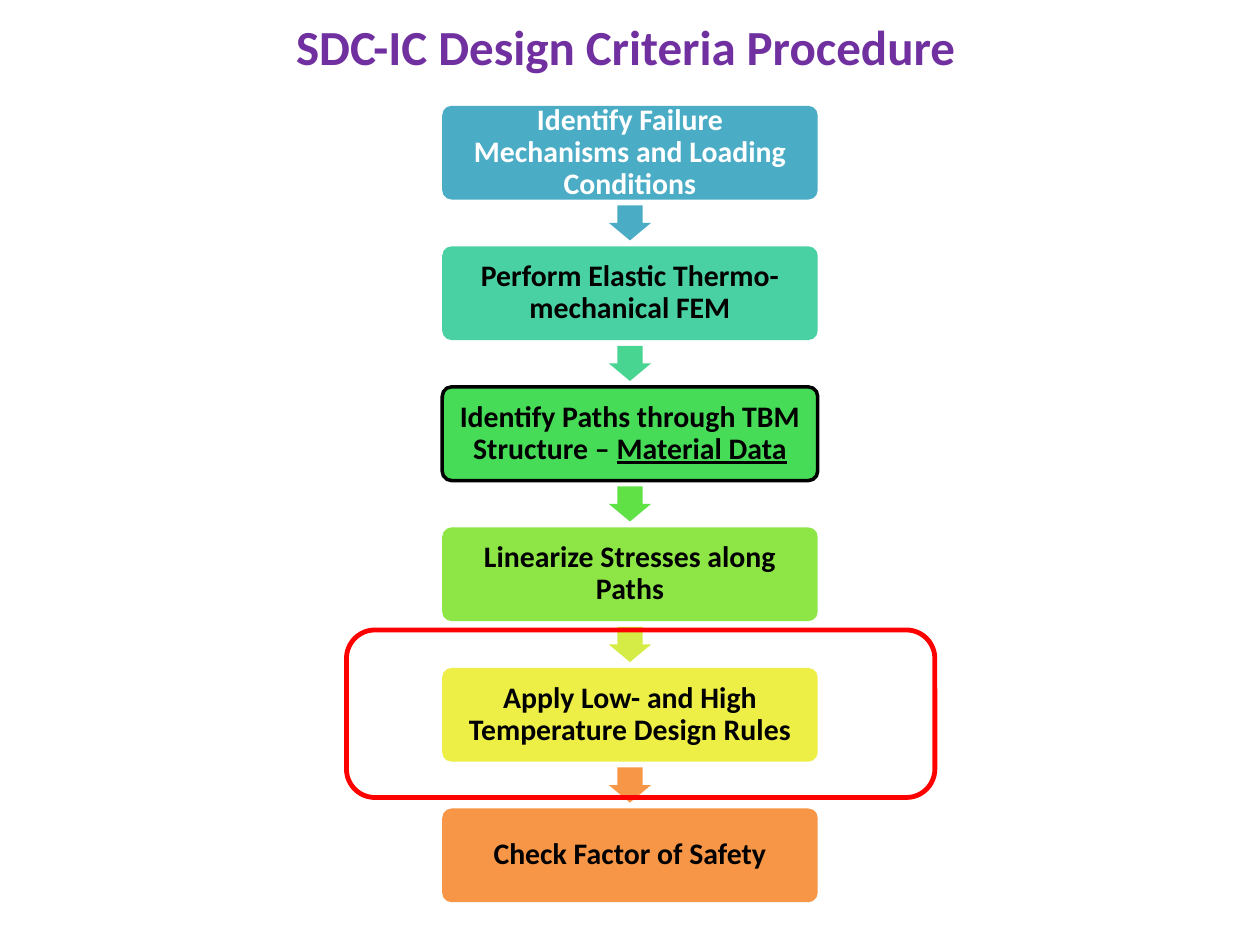
from dataclasses import dataclass

from pptx import Presentation
from pptx.dml.color import RGBColor
from pptx.enum.shapes import MSO_SHAPE as Shape
from pptx.enum.text import MSO_ANCHOR as Anchor, MSO_AUTO_SIZE as AutoSize, PP_ALIGN as Align
from pptx.util import Inches, Pt


@dataclass(frozen=True)
class Theme:
    """Colours, font and type sizes of the slide."""
    font: str = "Calibri"
    title: str = "7030A0"
    dark: str = "000000"
    light: str = "FFFFFF"
    highlight: str = "FF0000"
    title_size: float = 28
    step_size: float = 17


@dataclass(frozen=True)
class Step:
    """One step of the procedure and the arrow that follows it."""
    text: str
    fill: str
    arrow: str = ""
    underlined: str = ""
    color: str = Theme.dark
    outline: str = ""


THEME = Theme()
STEPS = [
    Step("Identify Failure Mechanisms and Loading Conditions", "4BACC6", "4BACC6", color=THEME.light),
    Step("Perform Elastic Thermo-mechanical FEM", "49D1A3", "48D491"),
    Step("Identify Paths through TBM Structure – ", "47DC57", "60E146",
         underlined="Material Data", outline=THEME.dark),
    Step("Linearize Stresses along Paths", "8DE646", "D5EC46"),
    Step("Apply Low- and High Temperature Design Rules", "EEEF46", "F79646"),
    Step("Check Factor of Safety", "F79646"),
]


def add_text(paragraph, text, size, color, underline=None):
    """Append a bold run in the theme font."""
    run = paragraph.add_run()
    run.text = text
    font = run.font
    font.name, font.size, font.bold = THEME.font, Pt(size), True
    font.underline = underline
    font.color.rgb = RGBColor.from_string(color)


def add_block(slide, kind, box, adjustments, fill="", outline="", width=2):
    """Add a preset shape with an optional fill and outline."""
    shape = slide.shapes.add_shape(kind, *map(Inches, box))
    shape.shadow.inherit = False
    for index, value in enumerate(adjustments):
        shape.adjustments[index] = value
    if fill:
        shape.fill.solid()
        shape.fill.fore_color.rgb = RGBColor.from_string(fill)
    else:
        shape.fill.background()
    if outline:
        shape.line.color.rgb = RGBColor.from_string(outline)
        shape.line.width = Pt(width)
    else:
        shape.line.fill.background()
    return shape


def add_title(slide, box, text):
    """Place the title placeholder in its box."""
    title = slide.shapes.title
    title.left, title.top, title.width, title.height = map(Inches, box)
    frame = title.text_frame
    frame.auto_size = AutoSize.NONE
    frame.vertical_anchor = Anchor.TOP
    paragraph = frame.paragraphs[0]
    paragraph.alignment = Align.LEFT
    add_text(paragraph, text, THEME.title_size, THEME.title)


def add_step(slide, box, step):
    """Draw one rounded step with its centred label."""
    shape = add_block(slide, Shape.ROUNDED_RECTANGLE, box, [0.1], step.fill, step.outline)
    frame = shape.text_frame
    frame.word_wrap = True
    frame.vertical_anchor = Anchor.MIDDLE
    frame.margin_left = frame.margin_right = frame.margin_top = frame.margin_bottom = Inches(0.09)
    paragraph = frame.paragraphs[0]
    paragraph.alignment = Align.CENTER
    paragraph.line_spacing = 0.9
    add_text(paragraph, step.text, THEME.step_size, step.color)
    if step.underlined:
        add_text(paragraph, step.underlined, THEME.step_size, step.color, underline=True)


def add_procedure(slide, box, steps):
    """Stack the steps evenly, with an arrow in each gap half a step high."""
    left, top, width, height = box
    step_height = height / (1.5 * len(steps) - 0.5)
    gap = step_height / 2
    arrow_height, arrow_width = 0.75 * gap, 0.9 * gap
    for index, step in enumerate(steps):
        step_top = top + index * (step_height + gap)
        add_step(slide, (left, step_top, width, step_height), step)
        if step.arrow:
            arrow_box = (left + (width - arrow_width) / 2,
                         step_top + step_height + (gap - arrow_height) / 2,
                         arrow_width, arrow_height)
            add_block(slide, Shape.DOWN_ARROW, arrow_box, [0.6, 0.5], step.arrow)


def main():
    """Build and save the slide."""
    presentation = Presentation()
    presentation.slide_width, presentation.slide_height = Inches(10), Inches(7.5)
    slide = presentation.slides.add_slide(presentation.slide_layouts[5])
    add_title(slide, (2.25, 0.08, 5.61, 0.57), "SDC-IC Design Criteria Procedure")
    add_procedure(slide, (3.51, 0.84, 2.98, 6.32), STEPS)
    add_block(slide, Shape.ROUNDED_RECTANGLE, (2.75, 5, 4.67, 1.33), [0.17],
              outline=THEME.highlight, width=2.75)
    presentation.save("out.pptx")


if __name__ == "__main__":
    main()
